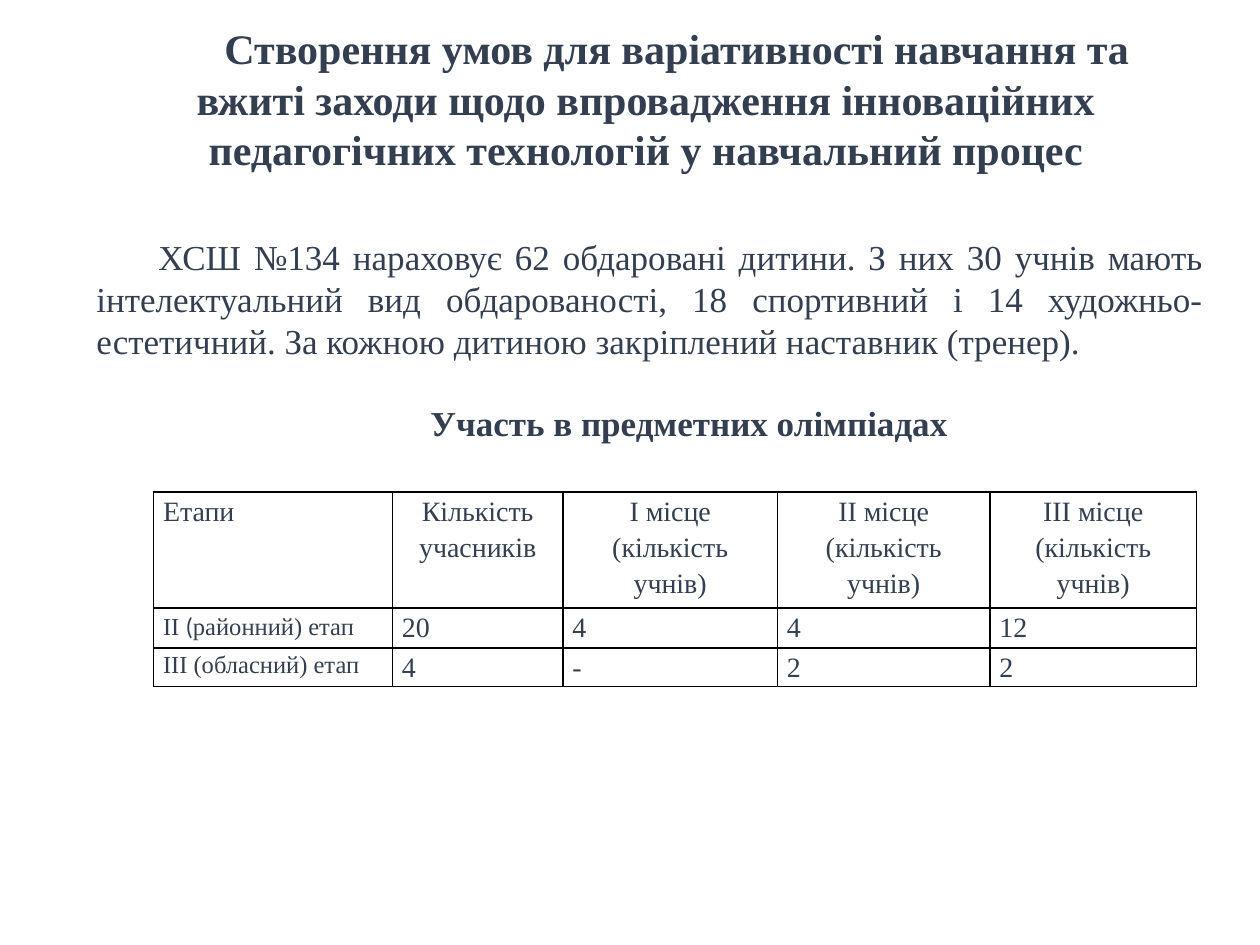
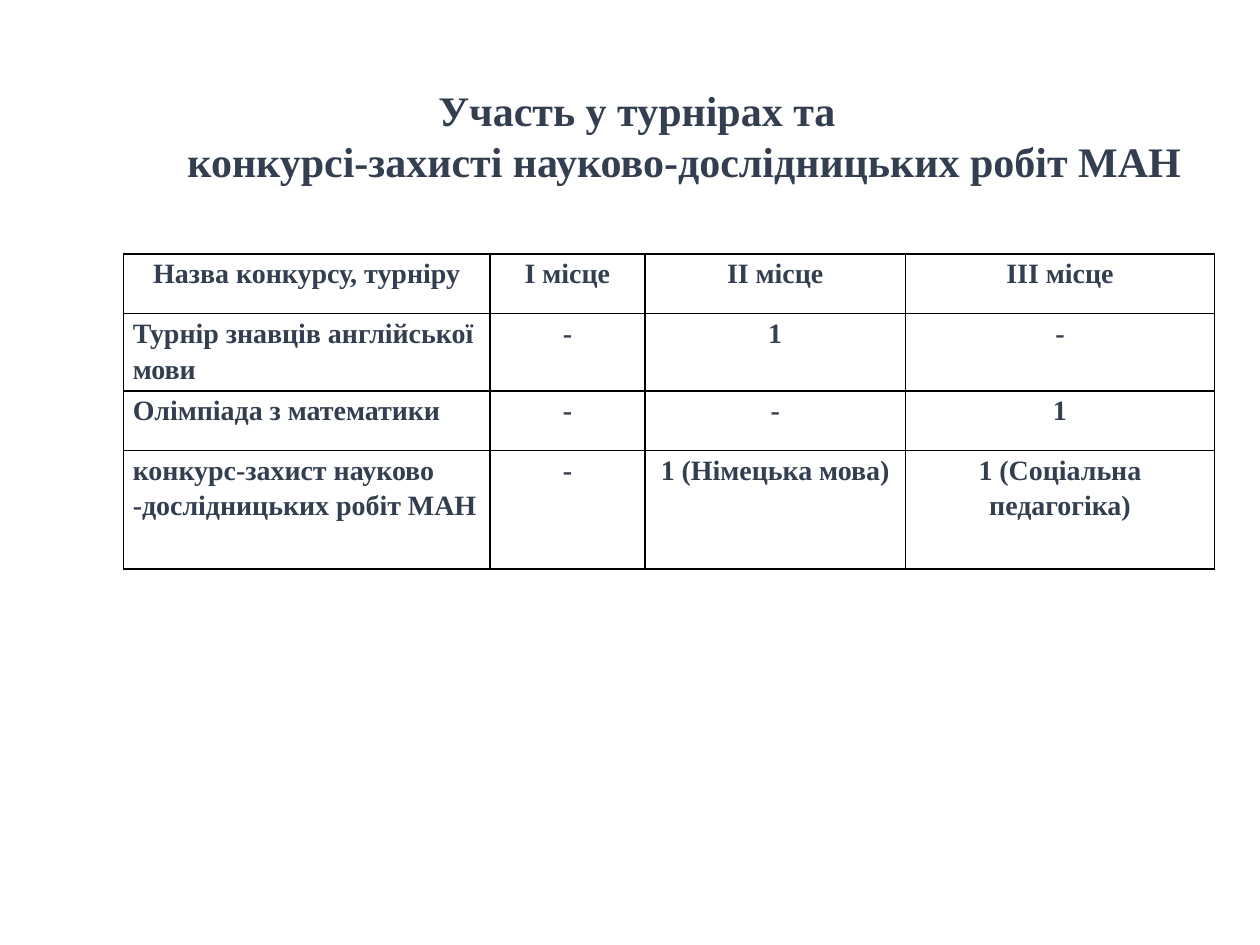
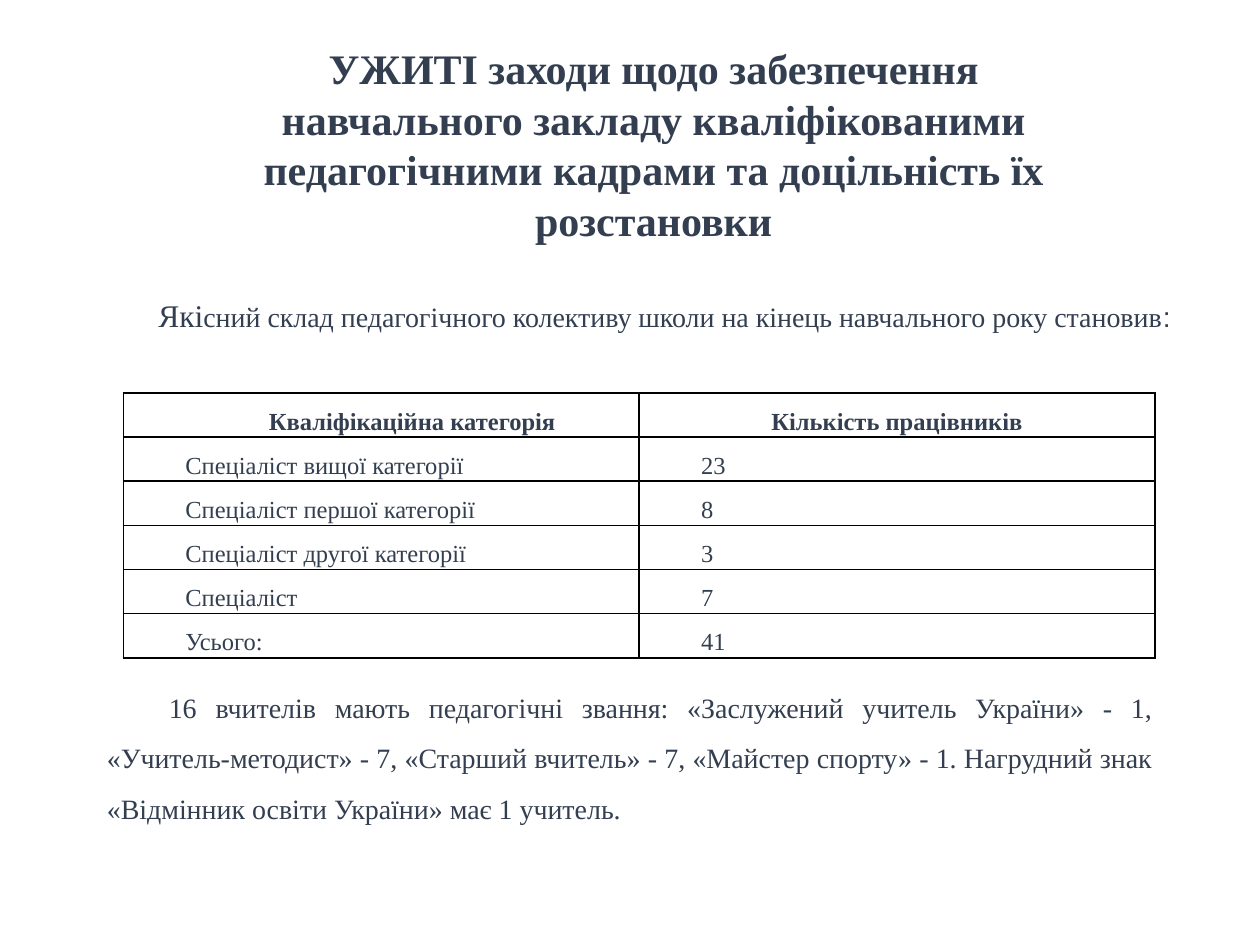
"""Build three slides of a school report with titles, tables and running text."""
from dataclasses import dataclass

from lxml.etree import SubElement
from pptx import Presentation
from pptx.dml.color import RGBColor
from pptx.enum.text import MSO_ANCHOR, PP_ALIGN
from pptx.oxml.ns import qn
from pptx.slide import Slide
from pptx.table import _Cell
from pptx.text.text import TextFrame
from pptx.util import Pt

COLORS = {"text": "333F50", "border": "000000", "background": "FFFFFF"}
SERIF = "Times New Roman"
FIRST_LINE = 35.4
TITLE_SIZE = 24
LEFT, CENTER, JUSTIFY = PP_ALIGN.LEFT, PP_ALIGN.CENTER, PP_ALIGN.JUSTIFY


@dataclass(frozen=True)
class TextRun:
    """Hold a piece of text with one format."""
    text: str
    size: float
    bold: bool = False
    font: str = SERIF


@dataclass(frozen=True)
class TextParagraph:
    """Hold the runs and layout of a paragraph."""
    runs: list[TextRun]
    alignment: PP_ALIGN = LEFT
    indent: float = 0
    spacing: float = 1.0


@dataclass(frozen=True)
class TextBlock:
    """Hold a text box with its place in points."""
    left: float
    top: float
    width: float
    height: float
    paragraphs: list[TextParagraph]
    anchor: MSO_ANCHOR = MSO_ANCHOR.TOP


@dataclass(frozen=True)
class Grid:
    """Hold a table with its measures in points."""
    left: float
    top: float
    columns: list[float]
    rows: list[float]
    cells: list[list[list[TextParagraph]]]
    side_margin: float = 5.4
    anchor: MSO_ANCHOR = MSO_ANCHOR.TOP


def plain(text: str, size: float, alignment: PP_ALIGN = LEFT, bold: bool = False,
          indent: float = 0, spacing: float = 1.0) -> TextParagraph:
    """Make a paragraph with a single run."""
    return TextParagraph([TextRun(text, size, bold)], alignment, indent, spacing)


def title(text: str, indent: float = 0) -> TextParagraph:
    """Make a paragraph in the title style."""
    return plain(text, TITLE_SIZE, CENTER, True, indent)


def fill_text(text_frame: TextFrame, paragraphs: list[TextParagraph]) -> None:
    """Write paragraphs into a text frame run by run."""
    for index, content in enumerate(paragraphs):
        paragraph = text_frame.paragraphs[0] if index == 0 else text_frame.add_paragraph()
        paragraph.alignment = content.alignment
        paragraph.line_spacing = content.spacing
        if content.indent:
            paragraph._p.get_or_add_pPr().set("indent", str(Pt(content.indent)))
        for piece in content.runs:
            run = paragraph.add_run()
            run.text = piece.text
            run.font.size = Pt(piece.size)
            run.font.bold = piece.bold
            run.font.name = piece.font
            run.font.color.rgb = RGBColor.from_string(COLORS["text"])


def draw_text(slide: Slide, block: TextBlock) -> None:
    """Draw a wrapped text box."""
    shape = slide.shapes.add_textbox(Pt(block.left), Pt(block.top),
                                     Pt(block.width), Pt(block.height))
    shape.text_frame.word_wrap = True
    shape.text_frame.vertical_anchor = block.anchor
    fill_text(shape.text_frame, block.paragraphs)


def add_borders(cell: _Cell) -> None:
    """Give a cell thin lines on all four sides."""
    properties = cell._tc.get_or_add_tcPr()
    for index, side in enumerate(("a:lnL", "a:lnR", "a:lnT", "a:lnB")):
        line = SubElement(properties, qn(side), w=str(Pt(1)))
        solid = SubElement(line, qn("a:solidFill"))
        SubElement(solid, qn("a:srgbClr"), val=COLORS["border"])
        properties.insert(index, line)


def draw_grid(slide: Slide, grid: Grid) -> None:
    """Draw a bordered table without banding."""
    frame = slide.shapes.add_table(len(grid.rows), len(grid.columns), Pt(grid.left), Pt(grid.top),
                                   Pt(sum(grid.columns)), Pt(sum(grid.rows)))
    table = frame.table
    table.first_row = table.horz_banding = False
    for column, width in zip(table.columns, grid.columns):
        column.width = Pt(width)
    for row, height, contents in zip(table.rows, grid.rows, grid.cells):
        row.height = Pt(height)
        for cell, paragraphs in zip(row.cells, contents):
            cell.margin_left = cell.margin_right = Pt(grid.side_margin)
            cell.margin_top = cell.margin_bottom = Pt(0)
            cell.vertical_anchor = grid.anchor
            cell.fill.background()
            add_borders(cell)
            fill_text(cell.text_frame, paragraphs)


def olympiad_grid() -> Grid:
    """Describe the table of subject olympiads."""
    def entry(text: str, alignment: PP_ALIGN = LEFT, size: float = 16) -> TextParagraph:
        return plain(text, size, alignment, spacing=1.15)

    places = [[entry(f"{number} місце", CENTER), entry("(кількість учнів)", CENTER)]
              for number in ("І", "ІІ", "ІІІ")]
    district = TextParagraph([TextRun("ІІ ", 14), TextRun("(", 14, font="Calibri"),
                              TextRun("районний) етап", 14)], spacing=1.15)
    region = entry("ІІІ (обласний) етап", size=14)
    results = [(district, ("20", "4", "4", "12")), (region, ("4", "-", "2", "2"))]
    cells = [[[entry("Етапи")], [entry("Кількість учасників", CENTER)], *places]]
    cells += [[[stage], *([entry(value)] for value in values)] for stage, values in results]
    return Grid(87.75, 281.25, [136.5, 97.5, 122.5, 121.5, 118], [66.25, 22.75, 22], cells)


def tournament_grid() -> Grid:
    """Describe the table of tournaments and contests."""
    rows = [
        ("Назва конкурсу, турніру", "І місце", "ІІ місце", "ІІІ місце"),
        ("Турнір знавців англійської мови", "-", "1", "-"),
        ("Олімпіада з математики", "-", "-", "1"),
        ("конкурс-захист науково -дослідницьких робіт МАН", "-",
         "1 (Німецька мова)", "1 (Соціальна педагогіка)"),
    ]
    cells = [[[plain(text, 16, LEFT if row and not column else CENTER, True, spacing=1.15)]
              for column, text in enumerate(texts)] for row, texts in enumerate(rows)]
    return Grid(70.5, 145.25, [209.5, 88.5, 149, 176.5], [34, 44, 34, 67.75], cells)


def category_grid() -> Grid:
    """Describe the table of staff categories."""
    rows = [
        ("Спеціаліст вищої категорії", "23"),
        ("Спеціаліст першої категорії", "8"),
        ("Спеціаліст другої категорії", "3"),
        ("Спеціаліст", "7"),
        ("Усього:", "41"),
    ]
    cells = [[[plain("Кваліфікаційна категорія", 14, CENTER, True, FIRST_LINE, 1.5)],
              [plain("Кількість працівників", 14, CENTER, True, spacing=1.5)]]]
    cells += [[[plain(text, 14, JUSTIFY, False, FIRST_LINE, 1.5)] for text in texts]
              for texts in rows]
    return Grid(70.5, 224.5, [294.75] * 2, [25.2] * len(cells), cells, 0, MSO_ANCHOR.MIDDLE)


def main() -> None:
    """Build and save the presentation."""
    presentation = Presentation()
    presentation.slide_width, presentation.slide_height = Pt(720), Pt(540)

    olympiads = [
        TextBlock(60, 9.5, 618, 94.5, [title(
            "Створення умов для варіативності навчання та вжиті заходи щодо впровадження "
            "інноваційних педагогічних технологій у навчальний процес", FIRST_LINE)]),
        TextBlock(48, 131, 646.5, 128, [plain(
            "ХСШ №134 нараховує 62 обдаровані дитини. З них 30 учнів мають інтелектуальний вид "
            "обдарованості, 18 спортивний і 14 художньо-естетичний. За кожною дитиною "
            "закріплений наставник (тренер).", 20, JUSTIFY, indent=FIRST_LINE)]),
        olympiad_grid(),
        TextBlock(178.5, 226, 430.5, 53.5,
                  [plain("Участь в предметних олімпіадах", 20, CENTER, True)]),
    ]
    tournaments = [
        tournament_grid(),
        TextBlock(42.5, 45, 643, 87, [
            title("Участь у турнірах та"),
            title("конкурсі-захисті науково-дослідницьких робіт МАН", 54)]),
    ]
    staff = [
        TextBlock(127.5, 21, 492, 124, [title(
            "УЖИТІ заходи щодо забезпечення навчального закладу кваліфікованими "
            "педагогічними кадрами та доцільність їх розстановки")]),
        TextBlock(48, 165.5, 641, 29, [TextParagraph([
            TextRun("Які", 18),
            TextRun("сний склад педагогічного колективу школи на кінець навчального року становив",
                    16),
            TextRun(":", 16, font="Arial")], JUSTIFY, FIRST_LINE)], MSO_ANCHOR.MIDDLE),
        category_grid(),
        TextBlock(54, 383, 612, 90.5, [plain(
            "16 вчителів мають педагогічні звання: «Заслужений учитель України» - 1, "
            "«Учитель-методист» - 7, «Старший вчитель» - 7, «Майстер спорту» - 1. "
            "Нагрудний знак «Відмінник освіти України» має 1 учитель.",
            16, JUSTIFY, indent=FIRST_LINE, spacing=1.5)], MSO_ANCHOR.MIDDLE),
    ]

    for elements in (olympiads, tournaments, staff):
        slide = presentation.slides.add_slide(presentation.slide_layouts[6])
        slide.background.fill.solid()
        slide.background.fill.fore_color.rgb = RGBColor.from_string(COLORS["background"])
        for element in elements:
            if isinstance(element, Grid):
                draw_grid(slide, element)
            else:
                draw_text(slide, element)

    presentation.save("out.pptx")


if __name__ == "__main__":
    main()
